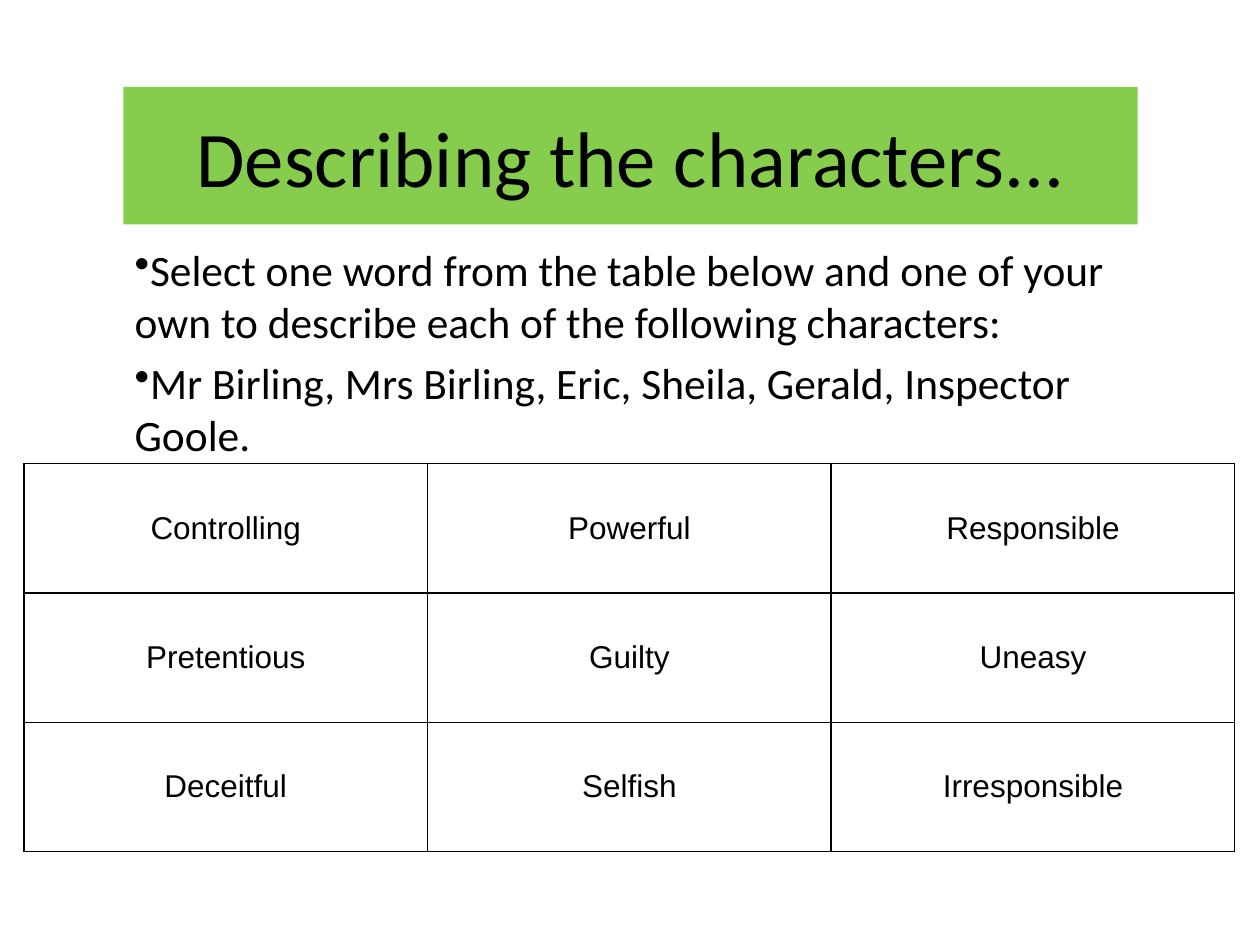
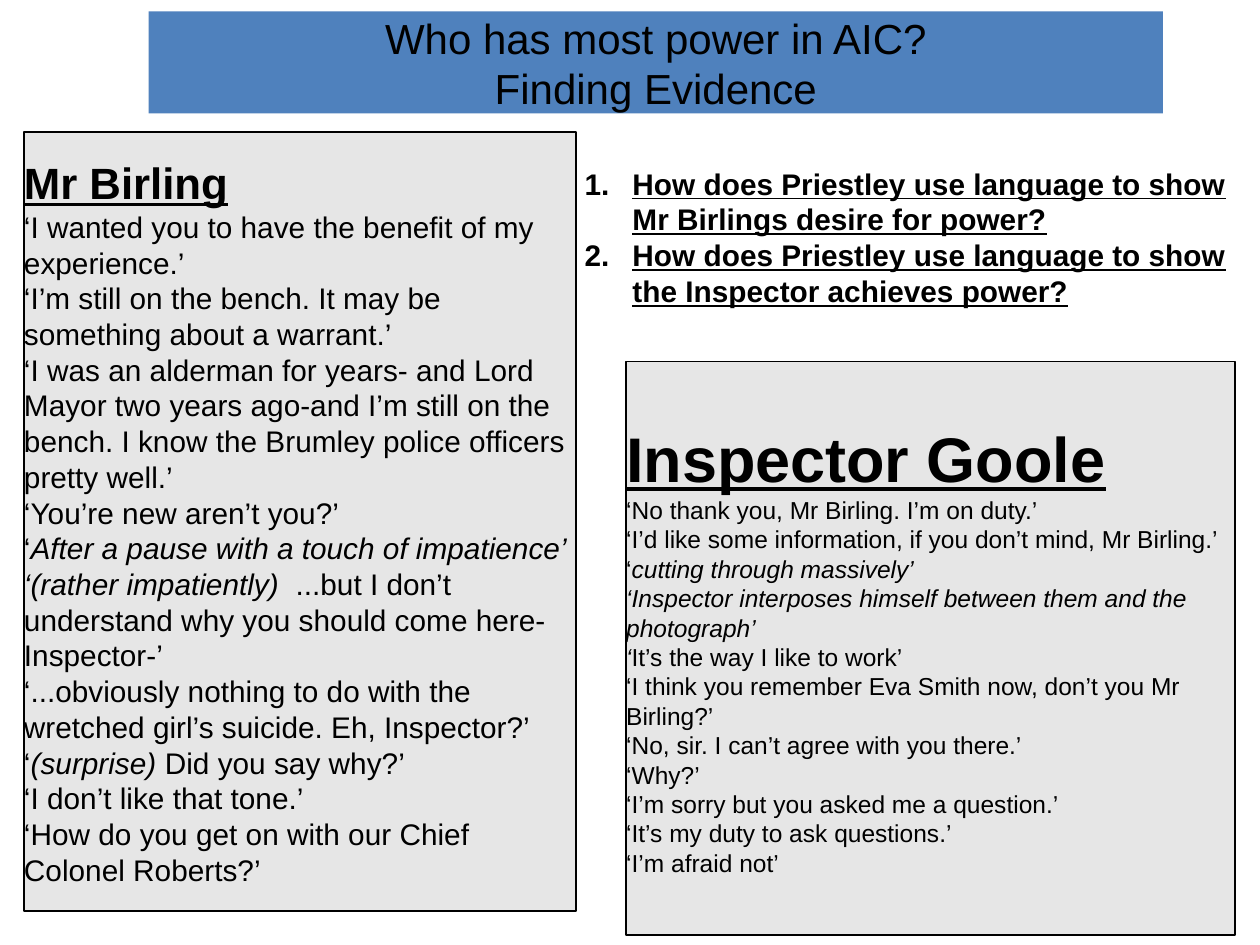
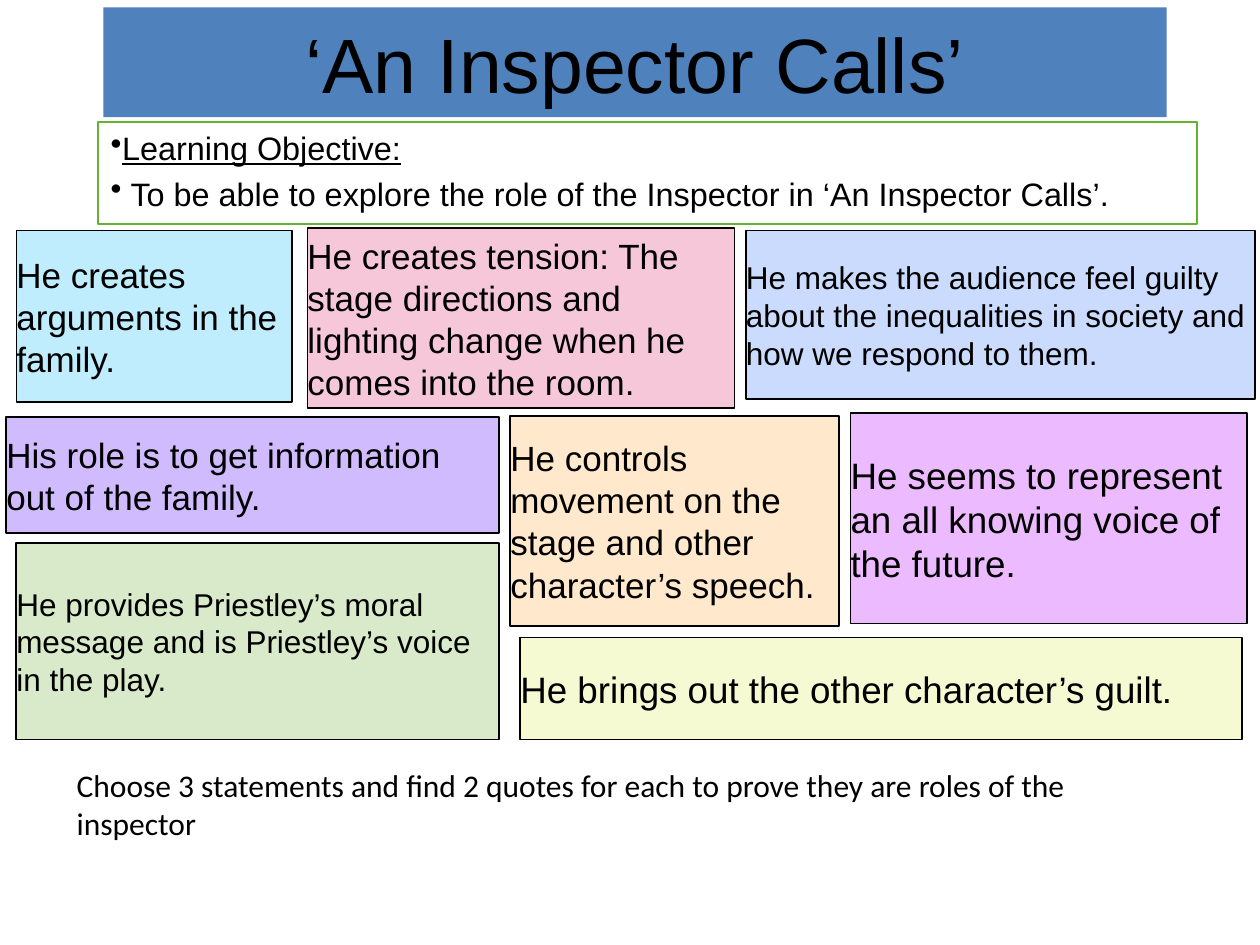
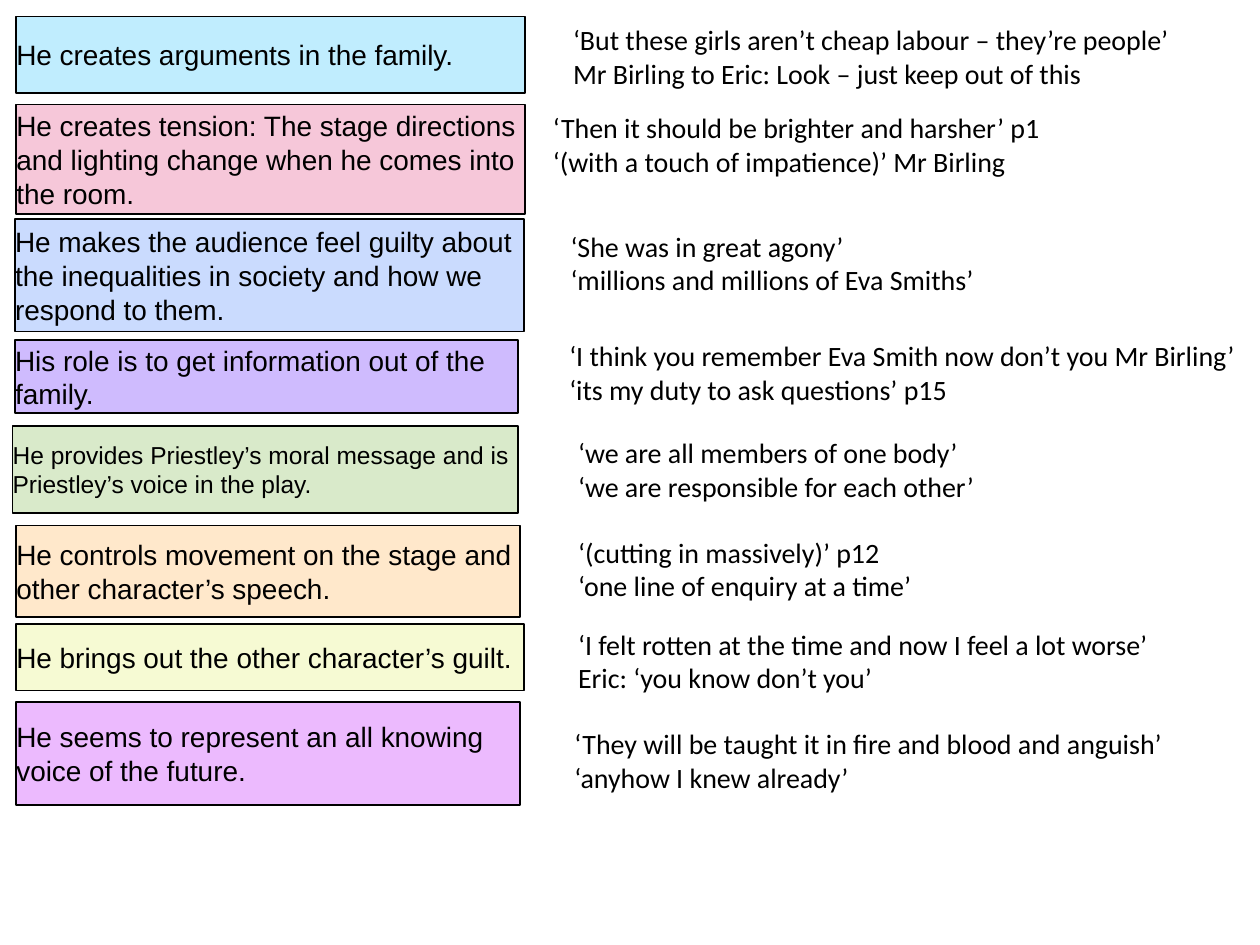
from lxml import etree
from pptx import Presentation
from pptx.dml.color import RGBColor
from pptx.enum.shapes import MSO_SHAPE
from pptx.enum.text import MSO_ANCHOR, PP_ALIGN
from pptx.oxml.ns import qn
from pptx.util import Inches, Pt

RECTANGLE = MSO_SHAPE.RECTANGLE
TOP, MIDDLE = MSO_ANCHOR.TOP, MSO_ANCHOR.MIDDLE
LEFT, CENTER = PP_ALIGN.LEFT, PP_ALIGN.CENTER

BLACK = RGBColor(0x00, 0x00, 0x00)
LIME = RGBColor(0x86, 0xCD, 0x4D)
LEAF = RGBColor(0x66, 0xB1, 0x32)
BLUE = RGBColor(0x4F, 0x81, 0xBD)
GREY = RGBColor(0xE6, 0xE6, 0xE6)
SKY = RGBColor(0xC0, 0xED, 0xFE)
PINK = RGBColor(0xF6, 0xC7, 0xD9)
PERIWINKLE = RGBColor(0xCA, 0xDB, 0xFE)
VIOLET = RGBColor(0xCF, 0xBB, 0xFE)
SAGE = RGBColor(0xD9, 0xEA, 0xCA)
PEACH = RGBColor(0xFF, 0xE8, 0xCB)
LEMON = RGBColor(0xF6, 0xFA, 0xD3)
ORCHID = RGBColor(0xEC, 0xBA, 0xFE)

deck = Presentation()
deck.slide_width = Inches(10)
deck.slide_height = Inches(7.5)
COLUMN = deck.slide_width / 100
ROW = deck.slide_height / 75
BLANK = deck.slide_layouts[6]


def add_panel(page, place, lines, size, font="Arial", fill=None, line=None,
              inset=0, anchor=MIDDLE, align=LEFT):
    left, top, width, height = place
    box = page.shapes.add_shape(RECTANGLE, int(left * COLUMN), int(top * ROW),
                                int(width * COLUMN), int(height * ROW))
    box.shadow.inherit = False
    if fill is None:
        box.fill.background()
    else:
        box.fill.solid()
        box.fill.fore_color.rgb = fill
    if line is None:
        box.line.fill.background()
    else:
        box.line.color.rgb = line
        box.line.width = Pt(1)
    frame = box.text_frame
    frame.word_wrap = True
    frame.vertical_anchor = anchor
    frame.margin_left = frame.margin_right = int(inset * COLUMN)
    frame.margin_top = frame.margin_bottom = int(inset * ROW / 2)
    frame.text = "\n".join(lines)
    for para in frame.paragraphs:
        para.alignment = align
        pieces = para.text.split("*")
        if len(pieces) > 1:
            para.clear()
            for number, piece in enumerate(pieces):
                if piece:
                    span = para.add_run()
                    span.text = piece
                    span.font.italic = number % 2 == 1
        for span in para.runs:
            span.font.size = Pt(size)
            span.font.name = font
            span.font.color.rgb = BLACK
    return box


def add_bullets(box, tag, attribute, value, gap=0, indent=0):
    for para in box.text_frame.paragraphs:
        para.space_before = Pt(gap)
        properties = para._p.get_or_add_pPr()
        properties.set("marL", str(int(indent * COLUMN)))
        properties.set("indent", str(int(-indent * COLUMN)))
        etree.SubElement(properties, qn(tag)).set(attribute, value)


# Describing the characters
page = deck.slides.add_slide(BLANK)
add_panel(page, (9.8, 6.9, 80.5, 10.9), ["Describing the characters..."], 45,
          "Calibri", LIME, inset=1, align=CENTER)
task = add_panel(page, (9.7, 18.8, 80.5, 17.2), [
    "Select one word from the table below and one of your own to describe each of the following characters:",
    "Mr Birling, Mrs Birling, Eric, Sheila, Gerald, Inspector Goole.",
], 24.8, "Calibri", inset=1, anchor=TOP)
add_bullets(task, "a:buChar", "char", "•", gap=5)

words = [
    ["Controlling", "Powerful", "Responsible"],
    ["Pretentious", "Guilty", "Uneasy"],
    ["Deceitful", "Selfish", "Irresponsible"],
]
table = page.shapes.add_table(3, 3, int(1.9 * COLUMN), int(36.8 * ROW),
                              int(96.1 * COLUMN), int(30.8 * ROW)).table
table.first_row = False
table.horz_banding = False
for row, row_words in enumerate(words):
    for column, word in enumerate(row_words):
        cell = table.cell(row, column)
        cell.text = word
        cell.vertical_anchor = MIDDLE
        cell.margin_left = cell.margin_right = int(COLUMN / 2)
        cell.margin_top = cell.margin_bottom = int(ROW / 2)
        para = cell.text_frame.paragraphs[0]
        para.alignment = CENTER
        font = para.runs[0].font
        font.size, font.name = Pt(18), "Arial"
        font.color.rgb = BLACK
        properties = cell._tc.get_or_add_tcPr()
        for side in ("a:lnL", "a:lnR", "a:lnT", "a:lnB"):
            border = etree.SubElement(properties, qn(side), w=str(Pt(1)))
            paint = etree.SubElement(border, qn("a:solidFill"))
            etree.SubElement(paint, qn("a:srgbClr"), val=str(BLACK))
        cell.fill.background()

# Finding evidence
page = deck.slides.add_slide(BLANK)
add_panel(page, (11.8, 0.9, 80.5, 8.1), ["Who has most power in AIC?\vFinding Evidence"],
          24, fill=BLUE, inset=1, align=CENTER)
questions = add_panel(page, (46.4, 9.9, 53.4, 17.8), [
    "How does Priestley use language to show Mr Birlings desire for power?",
    "How does Priestley use language to show the Inspector achieves power?",
], 17)
add_bullets(questions, "a:buAutoNum", "type", "arabicPeriod", indent=3.8)
for para in questions.text_frame.paragraphs:
    para.runs[0].font.bold = para.runs[0].font.underline = True

birling = [
    "Mr Birling",
    "‘I wanted you to have the benefit of my experience.’",
    "‘I’m still on the bench. It may be something about a warrant.’",
    "‘I was an alderman for years- and Lord Mayor two years ago-and I’m still on the bench. "
    "I know the Brumley police officers pretty well.’",
    "‘You’re new aren’t you?’",
    "‘*After a pause with a touch of impatience’*",
    "*‘(rather impatiently) * ...but I don’t understand why you should come here- Inspector-’",
    "‘...obviously nothing to do with the wretched girl’s suicide. Eh, Inspector?’",
    "‘*(surprise) *Did you say why?’",
    "‘I don’t like that tone.’",
    "‘How do you get on with our Chief Colonel Roberts?’",
]
goole = [
    "Inspector Goole",
    "‘No thank you, Mr Birling. I’m on duty.’",
    "‘I’d like some information, if you don’t mind, Mr Birling.’",
    "‘*cutting through massively’*",
    "*‘Inspector interposes himself between them and the photograph’*",
    "*‘*It’s the way I like to work’",
    "‘I think you remember Eva Smith now, don’t you Mr Birling?’",
    "‘No, sir. I can’t agree with you there.’",
    "‘Why?’",
    "‘I’m sorry but you asked me a question.’",
    "‘It’s my duty to ask questions.’",
    "‘I’m afraid not’",
]
for place, quotes, size, heading_size in [
    ((1.9, 10.5, 43.8, 61.8), birling, 17, 25),
    ((49.7, 28.7, 48.3, 45.5), goole, 14, 36),
]:
    box = add_panel(page, place, quotes, size, fill=GREY, line=BLACK)
    heading = box.text_frame.paragraphs[0].runs[0].font
    heading.size = Pt(heading_size)
    heading.bold = heading.underline = True

# Roles of the Inspector
statements = [
    ("He creates arguments in the family.", SKY),
    ("He creates tension: The stage directions and lighting change when he comes into the room.", PINK),
    ("He makes the audience feel guilty about the inequalities in society and how we respond to them.",
     PERIWINKLE),
    ("His role is to get information out of the family.", VIOLET),
    ("He provides Priestley’s moral message and is Priestley’s voice in the play.", SAGE),
    ("He controls movement on the stage and other character’s speech.", PEACH),
    ("He brings out the other character’s guilt.", LEMON),
    ("He seems to represent an all knowing voice of the future.", ORCHID),
]
page = deck.slides.add_slide(BLANK)
add_panel(page, (8.2, 0.6, 84.4, 8.7), ["‘An Inspector Calls’"], 44,
          fill=BLUE, inset=1, align=CENTER)
objective = add_panel(page, (7.8, 9.7, 87.2, 8.1), [
    "Learning Objective:",
    " To be able to explore the role of the Inspector in ‘An Inspector Calls’.",
], 18.5, line=LEAF, inset=1, anchor=TOP)
add_bullets(objective, "a:buChar", "char", "•", gap=3.7)
objective.text_frame.paragraphs[0].runs[0].font.underline = True

cards = [
    ((1.3, 18.3, 21.9, 13.6), 20),
    ((24.4, 18.1, 33.9, 14.3), 20),
    ((59.2, 18.3, 40.4, 13.4), 18),
    ((0.5, 33.1, 39.1, 9.2), 20),
    ((1.3, 43.1, 38.3, 15.6), 18),
    ((40.5, 33, 26.1, 16.7), 20),
    ((41.3, 50.6, 57.3, 8.1), 21),
    ((67.5, 32.8, 31.5, 16.7), 21),
]
for (statement, colour), (place, size) in zip(statements, cards):
    add_panel(page, place, [statement], size, fill=colour, line=BLACK)
add_panel(page, (5.1, 60.3, 87.5, 7.1),
          ["Choose 3 statements and find 2 quotes for each to prove they are roles of the inspector"],
          18, "Calibri", inset=1, anchor=TOP)

# Quotes for each role
page = deck.slides.add_slide(BLANK)
evidence = [
    ((1.3, 1.3, 40.4, 6.1), 16, (44.5, 1.3, 54.3),
     ["‘But these girls aren’t cheap labour – they’re people’",
      "Mr Birling to Eric: Look – just keep out of this"]),
    ((1.3, 8.3, 40.4, 8.7), 16, (42.9, 8.3, 54.3),
     ["‘Then it should be brighter and harsher’ p1", "‘(with a touch of impatience)’ Mr Birling"]),
    ((1.2, 17.4, 40.4, 8.9), 16, (44.3, 17.7, 54.3),
     ["‘She was in great agony’", "‘millions and millions of Eva Smiths’"]),
    ((1.2, 27, 39.9, 5.8), 16, (44.2, 26.4, 57),
     ["‘I think you remember Eva Smith now don’t you Mr Birling’",
      "‘its my duty to ask questions’ p15"]),
    ((1, 33.8, 40.1, 6.9), 14, (44.9, 34.1, 47.2),
     ["‘we are all members of one body’", "‘we are responsible for each other’"]),
    ((1.3, 41.7, 40, 7.3), 16, (44.9, 42, 47.2),
     ["‘(cutting in massively)’ p12", "‘one line of enquiry at a time’"]),
    ((1.3, 49.5, 40.3, 5.3), 16, (44.9, 49.3, 52.4),
     ["‘I felt rotten at the time and now I feel a lot worse’", "Eric: ‘you know don’t you’"]),
    ((1.3, 55.7, 40, 8.2), 16, (44.6, 57.2, 53.8),
     ["‘They will be taught it in fire and blood and anguish’", "‘anyhow I knew already’"]),
]
for (statement, colour), (place, size, quote_place, quotes) in zip(statements, evidence):
    add_panel(page, place, [statement], size, fill=colour, line=BLACK)
    add_panel(page, (*quote_place, 6.4), quotes, 16, "Calibri", inset=1, anchor=TOP)

deck.save("out.pptx")
